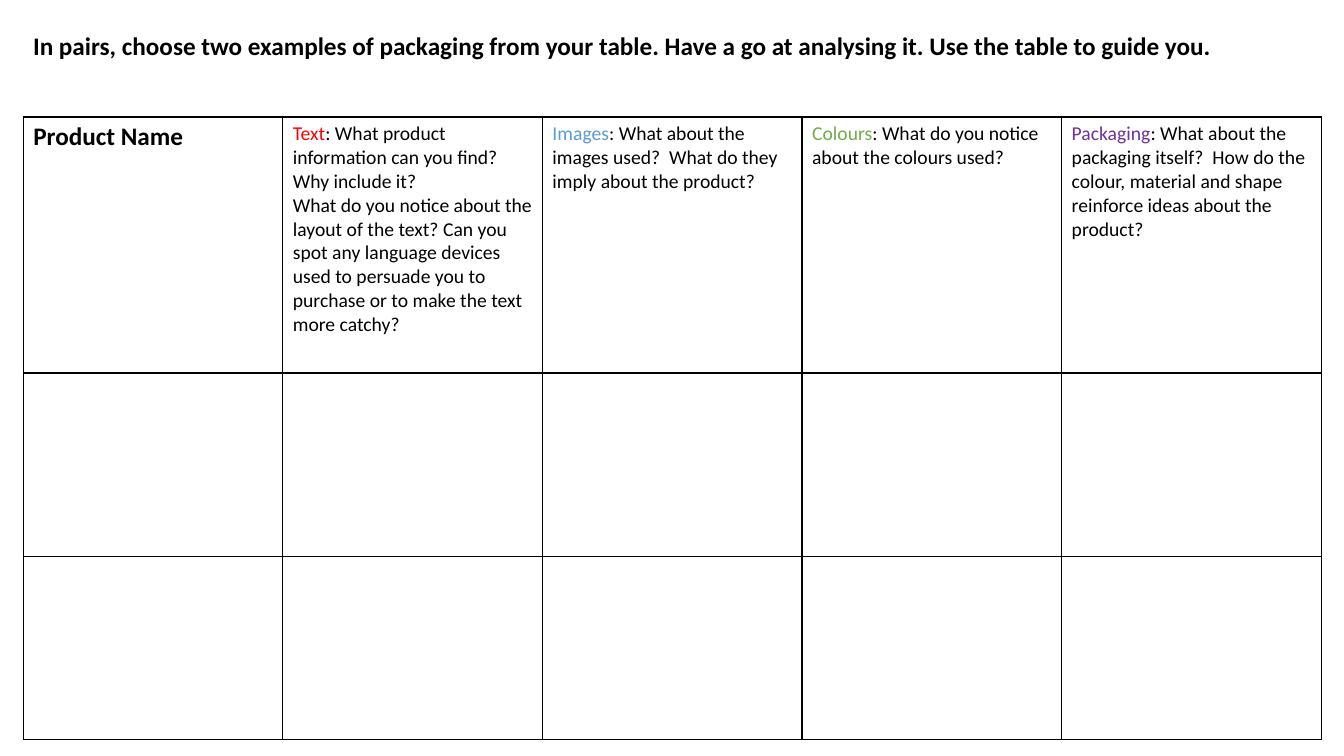
from dataclasses import dataclass

from lxml import etree
from pptx import Presentation
from pptx.dml.color import RGBColor
from pptx.enum import text as text_enum
from pptx.oxml import ns
from pptx.util import Pt


@dataclass(frozen=True)
class Theme:
    font: str = "Calibri"
    black: str = "000000"
    white: str = "FFFFFF"
    red: str = "FF0000"
    blue: str = "5B9BD5"
    green: str = "70AD47"
    purple: str = "7030A0"
    heading: int = 18
    body: int = 14
    thin: int = 1
    thick: int = 2


THEME = Theme()
INSTRUCTION = ("In pairs, choose two examples of packaging from your table. "
               "Have a go at analysing it. Use the table to guide you.")

# Each prompt: keyword, keyword colour, question, further paragraphs
PROMPTS = [
    ("Text", THEME.red, ": What product information can you find? Why include it?",
     ["What do you notice about the layout of the text? Can you spot any language devices "
      "used to persuade you to purchase or to make the text more catchy?"]),
    ("Images", THEME.blue,
     ": What about the images used?  What do they imply about the product?", []),
    ("Colours", THEME.green, ": What do you notice about the colours used?", []),
    ("Packaging", THEME.purple,
     ": What about the packaging itself?  How do the colour, material and shape "
     "reinforce ideas about the product?", []),
]
COLUMN_WIDTH = 185.47
ROW_HEIGHTS = [182.88, 131.04, 131.04]


def add_text(paragraph, content, size=THEME.body, color=THEME.black, bold=False):
    run = paragraph.add_run()
    run.text = content
    run.font.name = THEME.font
    run.font.size = Pt(size)
    run.font.bold = bold
    run.font.color.rgb = RGBColor.from_string(color)


def add_instruction(slide):
    box = slide.shapes.add_textbox(Pt(16.56), Pt(18), Pt(911.52), Pt(28.8))
    box.text_frame.word_wrap = True
    box.text_frame.auto_size = text_enum.MSO_AUTO_SIZE.SHAPE_TO_FIT_TEXT
    add_text(box.text_frame.paragraphs[0], INSTRUCTION, size=THEME.heading, bold=True)


def style_cell(cell, bottom):
    """Draw the four borders, then fill the cell."""
    properties = cell._tc.get_or_add_tcPr()
    widths = {"L": THEME.thin, "R": THEME.thin, "T": THEME.thin, "B": bottom}
    for side, width in widths.items():
        line = etree.SubElement(properties, ns.qn(f"a:ln{side}"), w=str(Pt(width)))
        fill = etree.SubElement(line, ns.qn("a:solidFill"))
        etree.SubElement(fill, ns.qn("a:srgbClr"), val=THEME.black)
    cell.fill.solid()
    cell.fill.fore_color.rgb = RGBColor.from_string(THEME.white)


def add_prompt(cell, keyword, color, question, further):
    frame = cell.text_frame
    add_text(frame.paragraphs[0], keyword, color=color)
    add_text(frame.paragraphs[0], question)
    for content in further:
        add_text(frame.add_paragraph(), content)


def add_analysis_table(slide):
    columns = len(PROMPTS) + 1
    table = slide.shapes.add_table(
        len(ROW_HEIGHTS), columns, Pt(16.56), Pt(83.52),
        Pt(COLUMN_WIDTH * columns), Pt(sum(ROW_HEIGHTS))).table
    table.first_row = False
    table.horz_banding = False
    for column in table.columns:
        column.width = Pt(COLUMN_WIDTH)
    for index, height in enumerate(ROW_HEIGHTS):
        table.rows[index].height = Pt(height)
        for cell in table.rows[index].cells:
            style_cell(cell, bottom=THEME.thin if index else THEME.thick)

    # Header row
    add_text(table.cell(0, 0).text_frame.paragraphs[0], "Product Name",
             size=THEME.heading, bold=True)
    for column, prompt in enumerate(PROMPTS, start=1):
        add_prompt(table.cell(0, column), *prompt)


def main():
    presentation = Presentation()
    presentation.slide_width = Pt(960)
    presentation.slide_height = Pt(540)
    slide = presentation.slides.add_slide(presentation.slide_layouts[6])
    add_instruction(slide)
    add_analysis_table(slide)
    presentation.save("out.pptx")


if __name__ == "__main__":
    main()
